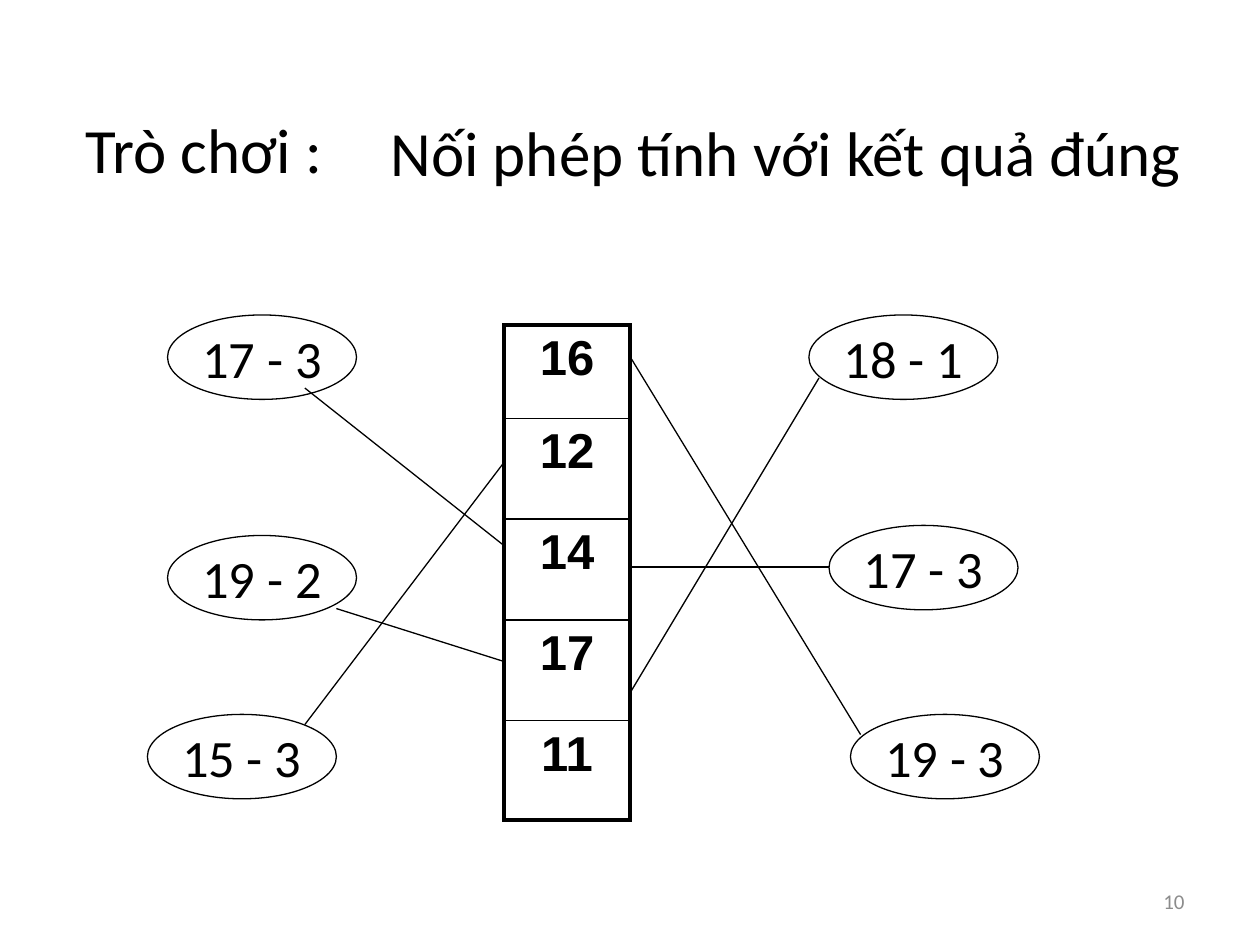
from pptx import Presentation
from pptx.dml.color import RGBColor
from pptx.enum.shapes import MSO_CONNECTOR, MSO_SHAPE
from pptx.enum.text import MSO_ANCHOR, MSO_AUTO_SIZE, PP_ALIGN
from pptx.oxml.ns import qn
from pptx.util import Inches, Pt
from lxml.etree import SubElement

LEFT, CENTER, RIGHT = PP_ALIGN.LEFT, PP_ALIGN.CENTER, PP_ALIGN.RIGHT
TOP, MIDDLE = MSO_ANCHOR.TOP, MSO_ANCHOR.MIDDLE
OVAL, STRAIGHT = MSO_SHAPE.OVAL, MSO_CONNECTOR.STRAIGHT
BLACK, WHITE, GREY = "000000", "FFFFFF", "8C8C8C"
THIN, INNER, OUTER = 0.75, 1, 2.25

TITLES = [("Trò chơi :", 0.58, 0.83, 2.16), ("Nối phép tính với kết quả đúng", 3, 0.85, 6.72)]
TITLE_H = 0.71
PAGE_NUMBER = "10"

RESULTS = ["16", "12", "14", "17", "11"]
ROW_HEIGHTS = [0.74, 0.8, 0.8, 0.8, 0.79]
COL_LEFT, COL_TOP, COL_W = 4, 2.58, 1
COL_RIGHT = COL_LEFT + COL_W

OVAL_W, OVAL_H = 1.5, 0.67
SUMS = [
    ("17 - 3", 1.33, 2.5), ("19 - 2", 1.33, 4.25), ("15 - 3", 1.17, 5.67),
    ("18 - 1", 6.42, 2.5), ("17 - 3", 6.58, 4.17), ("19 - 3", 6.75, 5.67),
]
# Start at the sum, end at the side of the result column
MATCHES = [
    ((2.42, 3.08), (COL_LEFT, 4.33)),
    ((2.67, 4.83), (COL_LEFT, 5.25)),
    ((2.42, 5.75), (COL_LEFT, 3.67)),
    ((6.5, 3), (COL_RIGHT, 5.5)),
    ((6.58, 4.5), (COL_RIGHT, 4.5)),
    ((6.83, 5.83), (COL_RIGHT, 2.83)),
]


def rgb(color):
    return RGBColor.from_string(color)


def put_text(tf, text, size, font="Calibri", color=BLACK, bold=False,
             align=LEFT, anchor=TOP, wrap=False):
    tf.word_wrap = wrap
    tf.vertical_anchor = anchor
    p = tf.paragraphs[0]
    p.alignment = align
    r = p.add_run()
    r.text = text
    r.font.size, r.font.name, r.font.bold = Pt(size), font, bold
    r.font.color.rgb = rgb(color)
    return p


def add_border(cell, side, width):
    """Draw one side of a cell; side is L, R, T or B, called in that order."""
    ln = SubElement(cell._tc.get_or_add_tcPr(), qn("a:ln" + side), w=str(Pt(width)))
    fill = SubElement(ln, qn("a:solidFill"))
    SubElement(fill, qn("a:srgbClr"), val=BLACK)


def add_results(slide):
    frame = slide.shapes.add_table(len(RESULTS), 1, Inches(COL_LEFT), Inches(COL_TOP),
                                   Inches(COL_W), Inches(sum(ROW_HEIGHTS)))
    table = frame.table
    table.first_row = table.horz_banding = False
    last = len(RESULTS) - 1
    for i, (result, height) in enumerate(zip(RESULTS, ROW_HEIGHTS)):
        table.rows[i].height = Inches(height)
        cell = table.cell(i, 0)
        p = put_text(cell.text_frame, result, 28, font="Arial", bold=True,
                     align=CENTER, wrap=True)
        before = SubElement(p._p.get_or_add_pPr(), qn("a:spcBef"))
        SubElement(before, qn("a:spcPct"), val="20000")
        add_border(cell, "L", OUTER)
        add_border(cell, "R", OUTER)
        add_border(cell, "T", OUTER if i == 0 else INNER)
        add_border(cell, "B", OUTER if i == last else INNER)
        cell.fill.background()


def add_sum(slide, text, x, y):
    sp = slide.shapes.add_shape(OVAL, Inches(x), Inches(y), Inches(OVAL_W), Inches(OVAL_H))
    sp.shadow.inherit = False
    sp.fill.solid()
    sp.fill.fore_color.rgb = rgb(WHITE)
    sp.line.color.rgb = rgb(BLACK)
    sp.line.width = Pt(THIN)
    put_text(sp.text_frame, text, 30, align=CENTER, anchor=MIDDLE)


def add_match(slide, start, end):
    line = slide.shapes.add_connector(STRAIGHT, *map(Inches, start + end))
    line.line.color.rgb = rgb(BLACK)
    line.line.width = Pt(THIN)
    SubElement(line._element.spPr, qn("a:effectLst"))


def main():
    prs = Presentation()
    prs.slide_width, prs.slide_height = Inches(10), Inches(7.5)
    slide = prs.slides.add_slide(prs.slide_layouts[6])

    number = slide.shapes.add_textbox(Inches(7.17), Inches(6.95), Inches(2.33), Inches(0.4))
    put_text(number.text_frame, PAGE_NUMBER, 12, color=GREY, align=RIGHT,
             anchor=MIDDLE, wrap=True)
    for text, x, y, w in TITLES:
        box = slide.shapes.add_textbox(Inches(x), Inches(y), Inches(w), Inches(TITLE_H))
        put_text(box.text_frame, text, 36)
        box.text_frame.auto_size = MSO_AUTO_SIZE.SHAPE_TO_FIT_TEXT

    add_results(slide)
    for item in SUMS:
        add_sum(slide, *item)
    for start, end in MATCHES:
        add_match(slide, start, end)
    prs.save("out.pptx")


if __name__ == "__main__":
    main()
